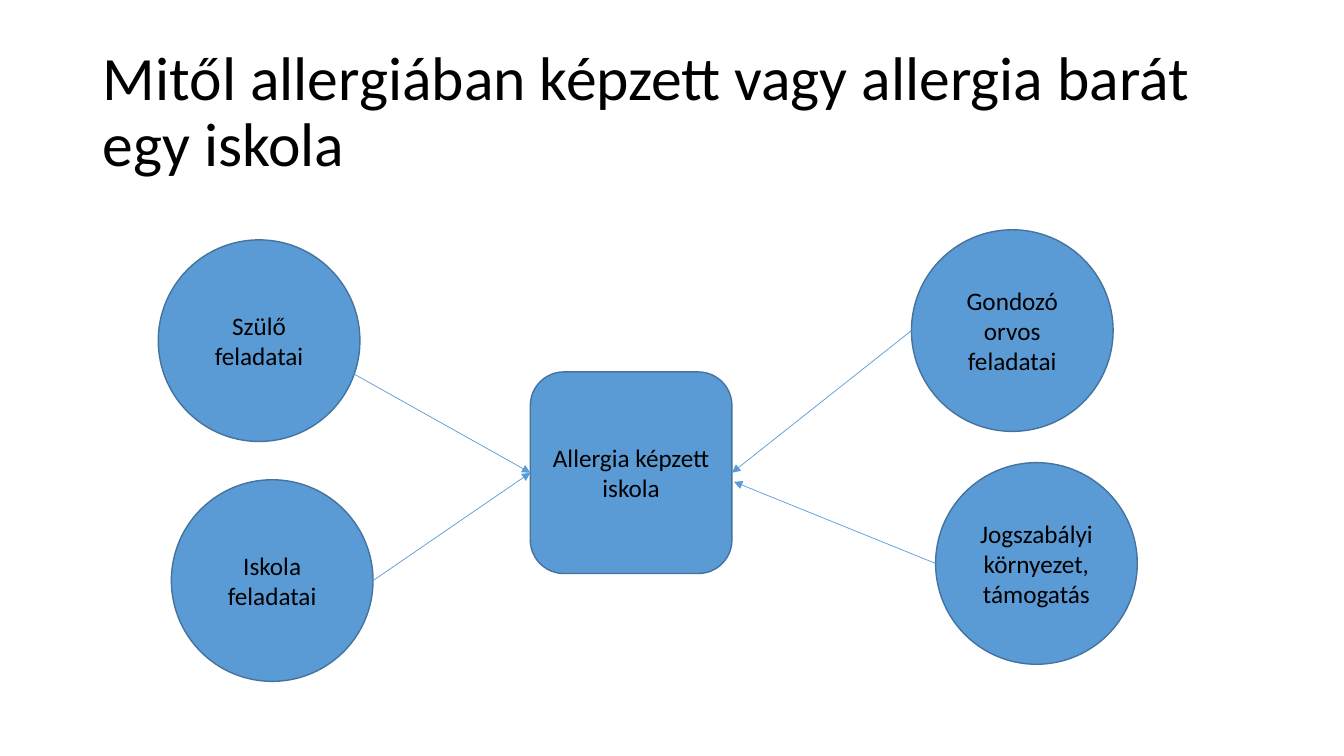
import dataclasses

import lxml.etree
import pptx
import pptx.dml.color
import pptx.enum.shapes
import pptx.enum.text
import pptx.oxml.ns
import pptx.util

Inches, Pt = pptx.util.Inches, pptx.util.Pt
RGB = pptx.dml.color.RGBColor.from_string
SHAPE = pptx.enum.shapes.MSO_SHAPE
ALIGN = pptx.enum.text.PP_ALIGN
qn = pptx.oxml.ns.qn


@dataclasses.dataclass
class Theme:
    font: str = "Calibri"
    text: str = "000000"
    fill: str = "5B9BD5"
    outline: str = "43739E"
    title_size: float = 44
    label_size: float = 18
    outline_width: float = 1
    arrow_width: float = 0.5


class Deck:
    def __init__(self, theme):
        self.theme = theme
        self.prs = pptx.Presentation()
        self.prs.slide_width = Inches(13.33)
        self.prs.slide_height = Inches(7.5)
        self.s = None

    def add_slide(self):
        self.s = self.prs.slides.add_slide(self.prs.slide_layouts[5])

    def set_text(self, tf, text, size, align):
        tf.word_wrap = True
        tf.auto_size = pptx.enum.text.MSO_AUTO_SIZE.NONE
        tf.vertical_anchor = pptx.enum.text.MSO_ANCHOR.MIDDLE
        p = tf.paragraphs[0]
        p.text = text
        p.alignment = align
        p.font.name = self.theme.font
        p.font.size = Pt(size)
        p.font.color.rgb = RGB(self.theme.text)
        return p

    def title(self, text, left, top, width, height):
        sp = self.s.shapes.title
        sp.left, sp.top = Inches(left), Inches(top)
        sp.width, sp.height = Inches(width), Inches(height)
        p = self.set_text(sp.text_frame, text, self.theme.title_size, ALIGN.LEFT)
        p.line_spacing = 0.9

    def node(self, kind, text, left, top, size=2):
        sp = self.s.shapes.add_shape(
            kind, Inches(left), Inches(top), Inches(size), Inches(size))
        sp.shadow.inherit = False
        sp.fill.solid()
        sp.fill.fore_color.rgb = RGB(self.theme.fill)
        sp.line.color.rgb = RGB(self.theme.outline)
        sp.line.width = Pt(self.theme.outline_width)
        self.set_text(sp.text_frame, text, self.theme.label_size, ALIGN.CENTER)
        return sp

    def arrow(self, start, end, target=None, side=None):
        c = self.s.shapes.add_connector(
            pptx.enum.shapes.MSO_CONNECTOR.STRAIGHT,
            *(Inches(v) for v in start + end))
        if target is not None:
            c.end_connect(target, side)
        c.line.color.rgb = RGB(self.theme.fill)
        c.line.width = Pt(self.theme.arrow_width)
        # Arrowhead and no shadow
        ln = c._element.spPr.find(qn("a:ln"))
        lxml.etree.SubElement(ln, qn("a:tailEnd")).set("type", "triangle")
        lxml.etree.SubElement(c._element.spPr, qn("a:effectLst"))


def main():
    deck = Deck(Theme())
    deck.add_slide()
    deck.title("Mitől allergiában képzett vagy allergia barát egy iskola",
               0.92, 0.4, 11.5, 1.45)

    # School in the centre
    school = deck.node(SHAPE.ROUNDED_RECTANGLE, "Allergia képzett iskola",
                       5.26, 3.69)

    # Contributors around it
    for text, left, top in (
            ("Gondozó orvos feladatai", 9.04, 2.28),
            ("Jogszabályi környezet, támogatás", 9.28, 4.59),
            ("Szülő feladatai", 1.57, 2.38),
            ("Iskola feladatai", 1.7, 4.76)):
        deck.node(SHAPE.OVAL, text, left, top)

    # Arrows to the school
    left_side, right_side = (5.26, 4.69), (7.26, 4.69)
    deck.arrow((3.51, 3.71), left_side, school, 1)
    deck.arrow((3.7, 5.76), left_side, school, 1)
    deck.arrow((9.04, 3.28), right_side, school, 3)
    deck.arrow((9.28, 5.59), (7.28, 4.78))

    deck.prs.save("out.pptx")


if __name__ == "__main__":
    main()
